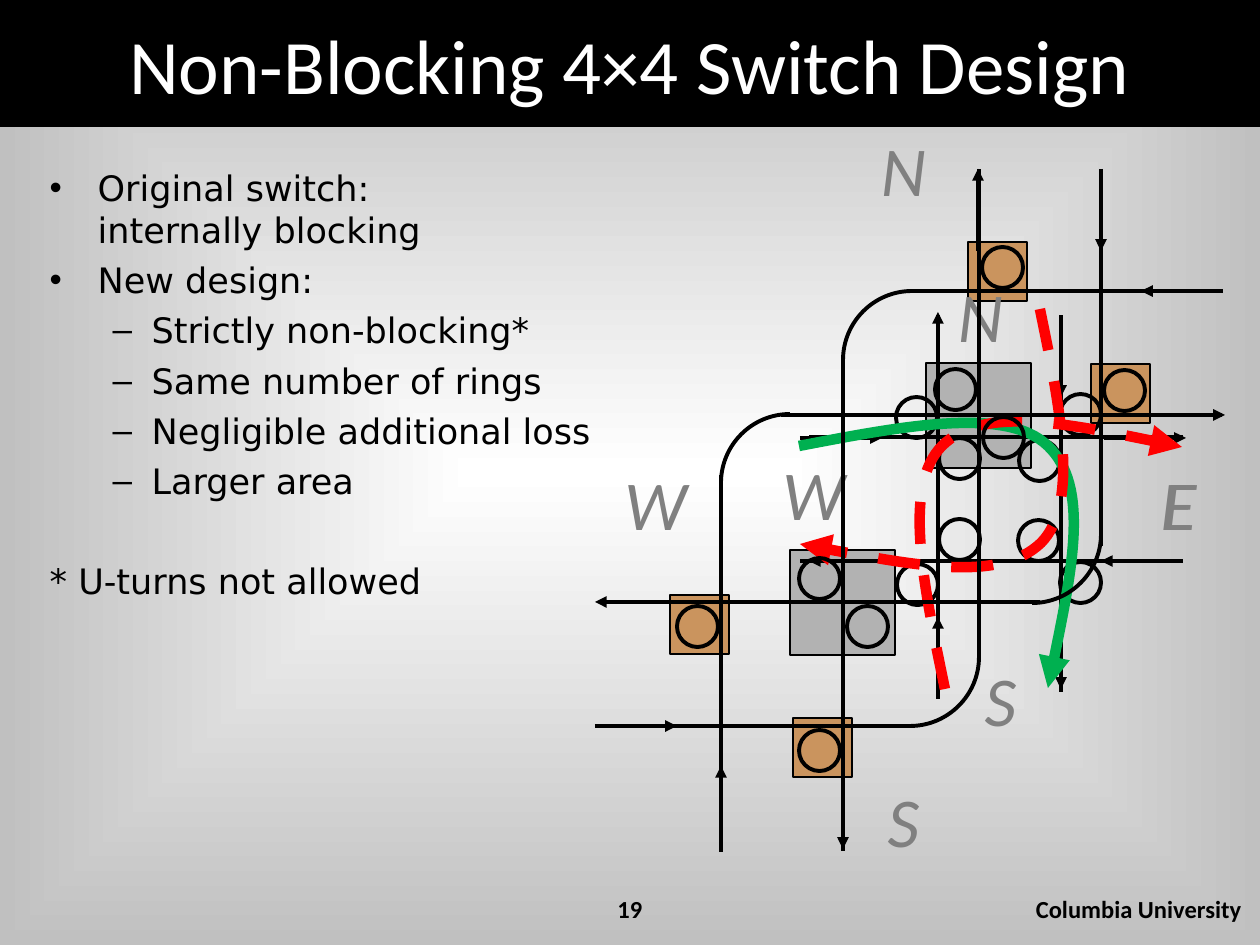
from lxml import etree
from pptx import Presentation
from pptx.dml.color import RGBColor
from pptx.enum.dml import MSO_LINE
from pptx.enum.shapes import MSO_CONNECTOR, MSO_SHAPE
from pptx.enum.text import MSO_ANCHOR, MSO_AUTO_SIZE, PP_ALIGN
from pptx.oxml.ns import qn
from pptx.util import Pt

PX = 914400 / 126
STRAIGHT = MSO_CONNECTOR.STRAIGHT
RECTANGLE, OVAL = MSO_SHAPE.RECTANGLE, MSO_SHAPE.OVAL
DASH = MSO_LINE.DASH
TOP, MIDDLE = MSO_ANCHOR.TOP, MSO_ANCHOR.MIDDLE
LEFT, CENTER, RIGHT = PP_ALIGN.LEFT, PP_ALIGN.CENTER, PP_ALIGN.RIGHT
NO_AUTOFIT = MSO_AUTO_SIZE.NONE

COLORS = {"black": "000000", "white": "FFFFFF", "edge": "C0C0C0",
          "added_ring": "CA945E", "ring_pair": "B2B2B2", "label": "808080",
          "green": "00B050", "red": "FF0000"}
TITLE_FONT, BODY_FONT = "Calibri", "DejaVu Sans"

RING, ARROW, BEND = 41, 82, 69
DIRECTIONS = {"N": (0, -1), "S": (0, 1), "E": (1, 0), "W": (-1, 0)}

ADDED_RING_PADS = [(670, 595), (793, 718), (1091, 364), (968, 242)]
RING_PAIR_PADS = [(926, 363), (790, 550)]

ORIGINAL_SWITCH = {
    "wires": [(938, 692, 938, 315), (1061, 692, 1061, 315),
              (1182, 561, 800, 561), (1183, 437, 809, 437)],
    "bends": [],
    "arrows": [(800, 438, "E"), (1183, 561, "W"), (938, 699, "N"), (1061, 315, "S"),
               (1061, 607, "S"), (1104, 438, "E"), (891, 561, "W"), (938, 394, "N")],
    "rings": [(939, 519), (1060, 562), (897, 564), (939, 438),
              (896, 397), (1018, 520), (1060, 394), (1019, 440)],
    "labels": [("W", 750, 444), ("E", 1114, 454), ("N", 917, 266), ("S", 937, 650)],
}
NEW_SWITCH = {
    "wires": [(599, 726, 914, 726), (599, 602, 1040, 602),
              (1101, 546, 1101, 169), (979, 659, 979, 169),
              (1222, 415, 781, 415), (1223, 291, 908, 291),
              (843, 359, 843, 851), (721, 475, 721, 852)],
    # Start of each bend, then the horizontal and vertical way it runs
    "bends": [(1101, 534, -1, 1), (979, 657, -1, 1),
              (843, 360, 1, -1), (721, 483, 1, -1)],
    "arrows": [(595, 726, "E"), (677, 602, "W"), (1143, 415, "E"), (1223, 291, "W"),
               (978, 251, "N"), (1101, 169, "S"), (721, 848, "N"), (843, 767, "S")],
    "rings": [(935, 369), (847, 606), (799, 730), (677, 606),
              (1104, 370), (983, 417), (799, 558), (982, 247)],
    "labels": [("W", 592, 454), ("E", 1116, 454), ("N", 840, 120), ("S", 840, 771)],
}
ROUTES = [
    ([(799, 446), (903, 426), (1007, 406), (1048, 446),
      (1090, 486), (1069, 587), (1048, 688)], "green", None),
    ([(1040, 309), (1060, 406), (1080, 504), (1041, 543),
      (1000, 582), (901, 563), (800, 544)], "red", DASH),
    ([(945, 689), (924, 587), (902, 486), (942, 446),
      (982, 406), (1082, 426), (1182, 447)], "red", DASH),
]
BULLETS = [(0, "Original switch:\ninternally blocking"), (0, "New design:"),
           (1, "Strictly non-blocking*"), (1, "Same number of rings"),
           (1, "Negligible additional loss"), (1, "Larger area")]
FOOTNOTE = "* U-turns not allowed"
LEVELS = [("•", 48, 48), ("–", 102, 39)]


def px(value):
    return round(value * PX)


def color(name):
    return RGBColor.from_string(COLORS[name])


def set_line(shape, color_name, width, dash=None, arrow=False):
    shape.line.color.rgb = color(color_name)
    shape.line.width = Pt(width)
    if dash is not None:
        shape.line.dash_style = dash
    if arrow:
        outline = shape.element.spPr.find(qn("a:ln"))
        etree.SubElement(outline, qn("a:tailEnd"), type="triangle")


def add_wire(slide, x1, y1, x2, y2, arrow=False):
    wire = slide.shapes.add_connector(STRAIGHT, px(x1), px(y1), px(x2), px(y2))
    set_line(wire, "black", 2.25, arrow=arrow)
    etree.SubElement(wire.element.spPr, qn("a:effectLst"))


def add_figure(slide, kind, box, fill, line_width):
    shape = slide.shapes.add_shape(kind, *map(px, box))
    shape.shadow.inherit = False
    if fill:
        shape.fill.solid()
        shape.fill.fore_color.rgb = color(fill)
    else:
        shape.fill.background()
    set_line(shape, "black", line_width)
    return shape


def add_curve(slide, points, color_name, width, dash=None, arrow=False):
    """Draw Bézier curves: a start, then two control points and an end for each."""
    builder = slide.shapes.build_freeform(*points[0], scale=PX)
    builder.add_line_segments(points[1:], close=False)
    curve = builder.convert_to_shape()
    curve.shadow.inherit = False
    curve.fill.background()
    set_line(curve, color_name, width, dash, arrow)
    segments = list(curve.element.iter(qn("a:lnTo")))
    outline = segments[0].getparent()
    for start in range(0, len(segments), 3):
        bezier = etree.SubElement(outline, qn("a:cubicBezTo"))
        for segment in segments[start:start + 3]:
            bezier.append(segment[0])
            outline.remove(segment)


def add_bend(slide, x, y, across, along):
    pull = round(BEND * 0.55)
    points = [(x, y), (x, y + along * pull),
              (x + across * (BEND - pull), y + along * BEND),
              (x + across * BEND, y + along * BEND)]
    add_curve(slide, points, "black", 2.25)


def add_run(paragraph, text, font, size, color_name, bold=False, italic=False):
    run = paragraph.add_run()
    run.text = text
    run.font.name, run.font.size = font, Pt(size)
    run.font.bold, run.font.italic = bold, italic
    run.font.color.rgb = color(color_name)


def prepare_frame(shape, anchor):
    frame = shape.text_frame
    frame.word_wrap = True
    frame.auto_size = NO_AUTOFIT
    frame.vertical_anchor = anchor
    return frame


def add_text(slide, box, text, alignment, anchor, size, color_name, **style):
    frame = prepare_frame(slide.shapes.add_textbox(*map(px, box)), anchor)
    frame.paragraphs[0].alignment = alignment
    add_run(frame.paragraphs[0], text, TITLE_FONT, size, color_name, **style)


def place(shape, box):
    shape.left, shape.top, shape.width, shape.height = map(px, box)


def set_background(slide):
    fill = slide.background.fill
    fill.gradient()
    for stop, position, name in zip(fill.gradient_stops, (0, 1), ("white", "edge")):
        stop.position = position
        stop.color.rgb = color(name)
    gradient = next(slide.element.iter(qn("a:gradFill")))
    gradient.remove(gradient.find(qn("a:lin")))
    shading = etree.SubElement(gradient, qn("a:path"), path="shape")
    etree.SubElement(shading, qn("a:fillToRect"), l="50000", t="50000", r="50000", b="50000")


def fill_title(slide):
    band = add_figure(slide, RECTANGLE, (0, 0, 1260, 126), "black", 0.75)
    slide.shapes.element.insert(2, band.element)
    title = slide.shapes.title
    place(title, (21, 11, 1218, 105))
    paragraph = prepare_frame(title, MIDDLE).paragraphs[0]
    paragraph.alignment = CENTER
    add_run(paragraph, "Non-Blocking 4×4 Switch Design", TITLE_FONT, 44, "white")


def add_body_paragraph(frame, text, level, bullet, space_before):
    first = not frame.paragraphs[0].runs
    paragraph = frame.paragraphs[0] if first else frame.add_paragraph()
    paragraph.level = level
    paragraph.alignment = LEFT
    paragraph.space_before = Pt(0 if first else space_before)
    symbol, margin, hanging = LEVELS[level]
    properties = paragraph._p.get_or_add_pPr()
    properties.set("marL", str(px(margin)))
    properties.set("indent", str(-px(hanging)))
    if bullet:
        etree.SubElement(properties, qn("a:buChar"), char=symbol)
    else:
        etree.SubElement(properties, qn("a:buNone"))
    for index, line in enumerate(text.split("\n")):
        if index:
            paragraph.add_line_break()
        add_run(paragraph, line, BODY_FONT, 20, "black")


def fill_body(slide):
    body = slide.placeholders[1]
    place(body, (37, 160, 654, 481))
    frame = prepare_frame(body, TOP)
    for level, text in BULLETS:
        add_body_paragraph(frame, text, level, True, 4.7)
    add_body_paragraph(frame, FOOTNOTE, 0, False, 33)


def add_switch(slide, switch):
    for wire in switch["wires"]:
        add_wire(slide, *wire)
    for bend in switch["bends"]:
        add_bend(slide, *bend)
    for x, y, direction in switch["arrows"]:
        dx, dy = DIRECTIONS[direction]
        add_wire(slide, x, y, x + dx * ARROW, y + dy * ARROW, arrow=True)
    for x, y in switch["rings"]:
        add_figure(slide, OVAL, (x, y, RING, RING), None, 2.25)
    for text, x, y in switch["labels"]:
        height = 95 if text == "S" else 127
        add_text(slide, (x, y, 127, height), text, CENTER, TOP, 40, "label", italic=True)


def main():
    presentation = Presentation()
    presentation.slide_width, presentation.slide_height = px(1260), px(945)
    slide = presentation.slides.add_slide(presentation.slide_layouts[1])
    set_background(slide)
    fill_title(slide)
    fill_body(slide)
    for pads, size, fill in ((ADDED_RING_PADS, 59, "added_ring"),
                             (RING_PAIR_PADS, 105, "ring_pair")):
        for x, y in pads:
            add_figure(slide, RECTANGLE, (x, y, size, size), fill, 1.5)
    add_switch(slide, ORIGINAL_SWITCH)
    for points, color_name, dash in ROUTES:
        add_curve(slide, points, color_name, 6, dash, arrow=True)
    add_switch(slide, NEW_SWITCH)
    add_text(slide, (958, 876, 296, 66), "Columbia University", RIGHT, MIDDLE, 14, "black", bold=True)
    add_text(slide, (441, 876, 378, 66), "19", CENTER, MIDDLE, 14, "black", bold=True)
    presentation.save("out.pptx")


if __name__ == "__main__":
    main()
